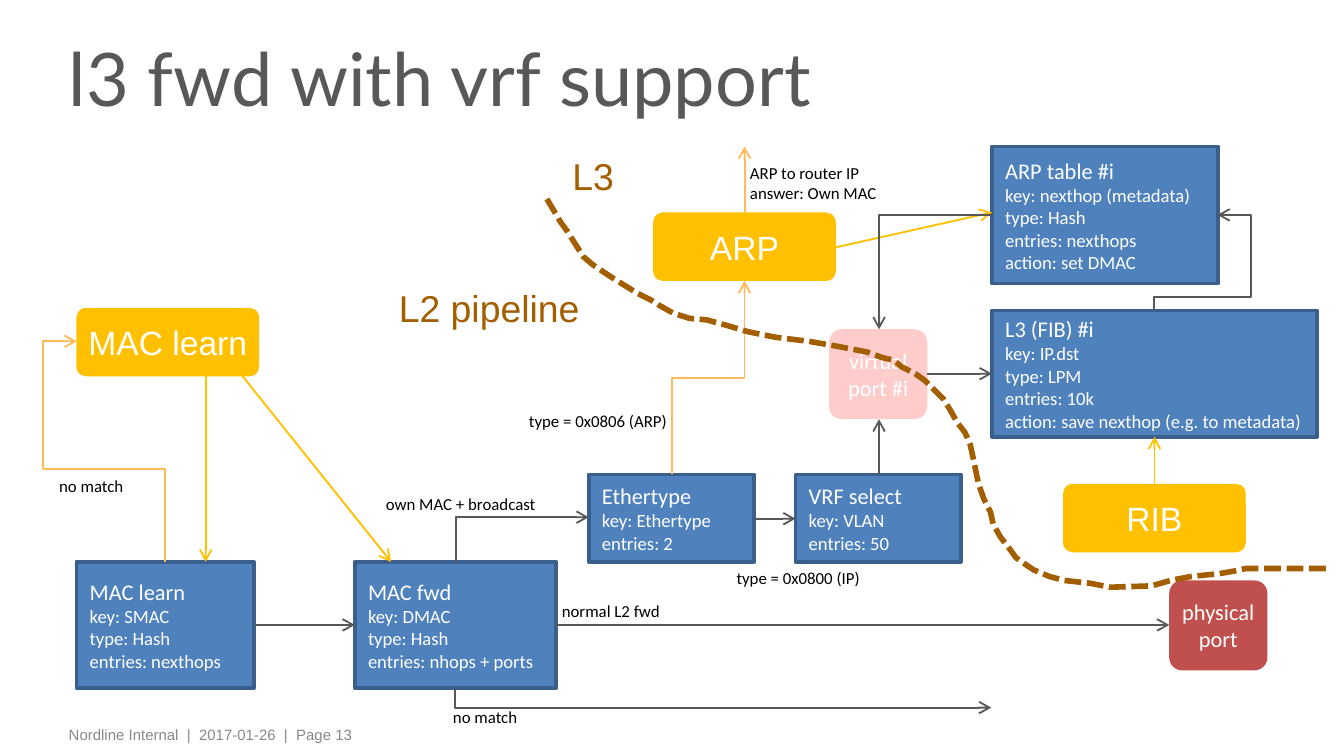
from pptx import Presentation
from pptx.dml.color import RGBColor
from pptx.enum.dml import MSO_LINE
from pptx.enum.shapes import MSO_CONNECTOR, MSO_SHAPE
from pptx.enum.text import MSO_ANCHOR, PP_ALIGN
from pptx.oxml.ns import qn
from pptx.util import Pt
from lxml import etree

RECT, ROUND = MSO_SHAPE.RECTANGLE, MSO_SHAPE.ROUNDED_RECTANGLE
LINE, BEND = MSO_CONNECTOR.STRAIGHT, MSO_CONNECTOR.ELBOW
DASH = MSO_LINE.SQUARE_DOT
TOP, MID = MSO_ANCHOR.TOP, MSO_ANCHOR.MIDDLE
LEFT, RIGHT, MIDDLE = PP_ALIGN.LEFT, PP_ALIGN.RIGHT, PP_ALIGN.CENTER

THEME = {
    "blue": "4F81BD", "edge": "3A5F8C", "gold": "FFC000", "peach": "FFBA5D",
    "red": "C0504D", "pink": "FFCCCC", "gray": "58585A", "brown": "A35E00",
    "pale": "87888A", "white": "FFFFFF", "black": "000000",
    "title": ("Lato", 39.6, "gray"), "foot": ("Arial", 8, "pale"),
    "head": ("Calibri", 12, "white"), "body": ("Calibri", 10, "white"),
    "label": ("Calibri", 9, "black"), "pill": ("Arial", 18, "white"),
    "zone": ("Arial", 20, "brown"),
}

TABLES = [
    ((315.4, 254.2, 88.6, 46.8), ["Ethertype", "key: Ethertype", "entries: 2"]),
    ((426.2, 254.2, 88.6, 46.8), ["VRF select", "key: VLAN", "entries: 50"]),
    ((531.4, 166.3, 174.2, 67.7),
     ["L3 (FIB) #i", "key: IP.dst", "type: LPM", "entries: 10k",
      "action: save nexthop (e.g. to metadata)"]),
    ((531.4, 78.5, 121, 73.4),
     ["ARP table #i", "key: nexthop (metadata)", "type: Hash",
      "entries: nexthops", "action: set DMAC"]),
    ((41, 301, 95, 67.7),
     ["MAC learn", "key: SMAC", "type: Hash", "entries: nexthops"]),
    ((190.1, 301, 108, 67.7),
     ["MAC fwd", "key: DMAC", "type: Hash", "entries: nhops + ports"]),
]
LABELS = [
    ((391.7, 301, 120.2, 15.8), "type = 0x0800 (IP)", LEFT),
    ((274.3, 217.4, 85.7, 17.3), "type = 0x0806 (ARP)", RIGHT),
    ((203.8, 261.4, 120.2, 15.8), "own MAC + broadcast", LEFT),
    ((298.1, 319, 153.4, 15.8), "normal L2 fwd", LEFT),
    ((239.8, 375.8, 120.2, 9.4), "no match", LEFT),
    ((28.8, 252, 120.2, 15.8), "no match", LEFT),
    ((398.9, 84.2, 136.8, 26.6), "ARP to router IP\vanswer: Own MAC", LEFT),
]
ZONES = [
    ((206.6, 149, 126.7, 31.7), "L2 pipeline"),
    ((299.5, 78.5, 50.4, 31.7), "L3"),
]
PILLS = [(41, 164.9, "MAC learn"), (349.9, 113.8, "ARP"), (569.5, 259.2, "RIB")]
PORTS = [
    (626.4, 311, "physical\vport", "red"),
    (444.2, 176.4, "virtual\vport #i", "pink"),
]
ARROWS = [
    ("gray", 298.1, 334.8, 626.4, 334.8),
    ("gray", 136.8, 334.8, 190.1, 334.8),
    ("gray", 404.6, 277.9, 426.2, 277.9),
    ("gray", 470.9, 254.2, 470.9, 224.6),
    ("gray", 496.8, 200.2, 531.4, 200.2),
    ("gold", 110.2, 201.6, 110.2, 301),
    ("gold", 128.9, 200.2, 209.5, 301),
    ("gold", 447.8, 132.5, 531.4, 113.8),
    ("gold", 618.5, 259.2, 618.5, 234),
    ("peach", 398.9, 113.8, 398.9, 78.5),
]
BENDS = [
    ("gray", (382.3, 230.4, 10.1, 287.3), 270, "H", 2, []),
    ("gray", (267.8, 253.4, 23.8, 71.3), 90, "HV", 2, []),
    ("gray", (609.8, 123.8, 51.1, 33.8), 90, "HV", 4, [14200, 152600]),
    ("gray", (531.4 - 60.5, 115.2, 60.5, 61.2), 180, "V", 2, []),
    ("peach", (5.8, 218.2, 118.1, 47.5), 270, "V", 4, [42200, 137800]),
    ("peach", (327.6, 182.9, 103.7, 38.9), 90, "HV", 3, [50000]),
]
BORDER = [
    (293, 106.6), (298.1, 115.2), (300.2, 118.8), (303.8, 123.8),
    (308.9, 131.8), (312.5, 137.5), (317.5, 141.8), (321.8, 144.7),
    (328.3, 149), (334.1, 152.6), (341.3, 157), (348.5, 160.6),
    (352.8, 163.4), (360.7, 167.8), (369.4, 170.6), (378.7, 171.4),
    (388.8, 174.2), (401, 177.8), (415.4, 180.7), (433.4, 182.9),
    (450, 185.8), (464.4, 188.6), (472.3, 191.5), (478.8, 193),
    (483.1, 196.6), (490.3, 200.2), (495.4, 203.8), (501.1, 209.5),
    (505.4, 213.8), (509, 219.6), (512.6, 226.1), (517, 231.8),
    (519.8, 238.3), (522, 248.4), (524.2, 259.2), (527, 267.1),
    (530.6, 274.3), (532.1, 280.8), (535.7, 287.3), (540.7, 293.8),
    (544.3, 298.8), (549.4, 302.4), (553.7, 305.3), (562.3, 308.9),
    (570.2, 311), (583.9, 312.5), (594.7, 314.6), (617, 313.9),
    (627.1, 311), (637.9, 308.9), (653, 307.4), (661, 306),
    (667.4, 304.6), (712.1, 304.6),
]

deck = Presentation()
deck.slide_width, deck.slide_height = Pt(720), Pt(405)
slide = deck.slides.add_slide(deck.slide_layouts[6])
shapes = slide.shapes


def tint(name):
    return RGBColor.from_string(THEME[name])


def apply(thing, form):
    for key, value in form.items():
        setattr(thing, key, value)


def write(shape, lines, styles, pad, align=LEFT, anchor=TOP, wrap=True, space=None):
    frame = shape.text_frame
    side, edge = map(Pt, pad)
    apply(frame, {"margin_left": side, "margin_right": side, "margin_top": edge,
                  "margin_bottom": edge, "word_wrap": wrap, "vertical_anchor": anchor})
    for i, line in enumerate(lines):
        para = frame.add_paragraph() if i else frame.paragraphs[0]
        apply(para, {"text": line, "alignment": align, "line_spacing": space})
        face, size, hue = THEME[styles[min(i, len(styles) - 1)]]
        for run in para.runs:
            apply(run.font, {"name": face, "size": Pt(size)})
            run.font.color.rgb = tint(hue)


def note(box, text, style, pad, **form):
    write(shapes.add_textbox(*map(Pt, box)), [text], [style], pad, **form)


def block(kind, box, fill, edge=None):
    shape = shapes.add_shape(kind, *map(Pt, box))
    shape.shadow.inherit = False
    shape.fill.solid()
    shape.fill.fore_color.rgb = tint(fill)
    if edge:
        stroke(shape, edge, 2)
    else:
        shape.line.fill.background()
    if kind == ROUND:
        shape.adjustments[0] = 0.144
    return shape


def stroke(shape, hue, width):
    shape.line.color.rgb = tint(hue)
    shape.line.width = Pt(width)


def arrow(kind, hue, ends):
    wire = shapes.add_connector(kind, *map(Pt, ends))
    stroke(wire, hue, 1)
    props = wire.element.spPr
    etree.SubElement(props.find(qn("a:ln")), qn("a:tailEnd"), type="arrow")
    etree.SubElement(props, qn("a:effectLst"))
    return props


note((31, 385.2, 582.5, 13), "Nordline Internal  |  2017-01-26  |  Page 13",
     "foot", (5.8, 3.6))
note((31, 14.4, 590.4, 64.1), "l3 fwd with vrf support", "title", (5.8, 0),
     anchor=MID, space=0.75)

for box, lines in TABLES:
    write(block(RECT, box, "blue", "edge"), lines, ["head", "body"], (7.2, 0), anchor=MID)
for box, text, align in LABELS:
    note(box, text, "label", (2.9, 2.9), align=align)
for x, y, text in PILLS:
    write(block(ROUND, (x, y, 97.9, 36.7), "gold"), [text], ["pill"], (4.3, 2.9),
          MIDDLE, MID, False)
for x, y, text, fill in PORTS:
    write(block(ROUND, (x, y, 52.6, 48.2), fill), [text], ["head"], (5.8, 3.6),
          MIDDLE, MID, False)
for hue, *ends in ARROWS:
    arrow(LINE, hue, ends)

for hue, (x, y, w, h), turn, flips, parts, bends in BENDS:
    props = arrow(BEND, hue, (x, y, x + w, y + h))
    form = props.find(qn("a:xfrm"))
    form.set("rot", str(turn * 60000))
    for flip in flips:
        form.set("flip" + flip, "1")
    preset = props.find(qn("a:prstGeom"))
    preset.set("prst", f"bentConnector{parts}")
    guides = preset.find(qn("a:avLst"))
    if guides is None:
        guides = etree.SubElement(preset, qn("a:avLst"))
    for i, bend in enumerate(bends, 1):
        etree.SubElement(guides, qn("a:gd"), name=f"adj{i}" if parts > 3 else "adj1",
                         fmla=f"val {bend}")

dots = [(Pt(x), Pt(y)) for x, y in BORDER]
pen = shapes.build_freeform(*dots[0])
pen.add_line_segments(dots[1:], close=False)
curve = pen.convert_to_shape()
curve.shadow.inherit = False
curve.fill.background()
stroke(curve, "brown", 3)
curve.line.dash_style = DASH

for box, text in ZONES:
    note(box, text, "zone", (7.2, 3.6))

deck.save("out.pptx")
